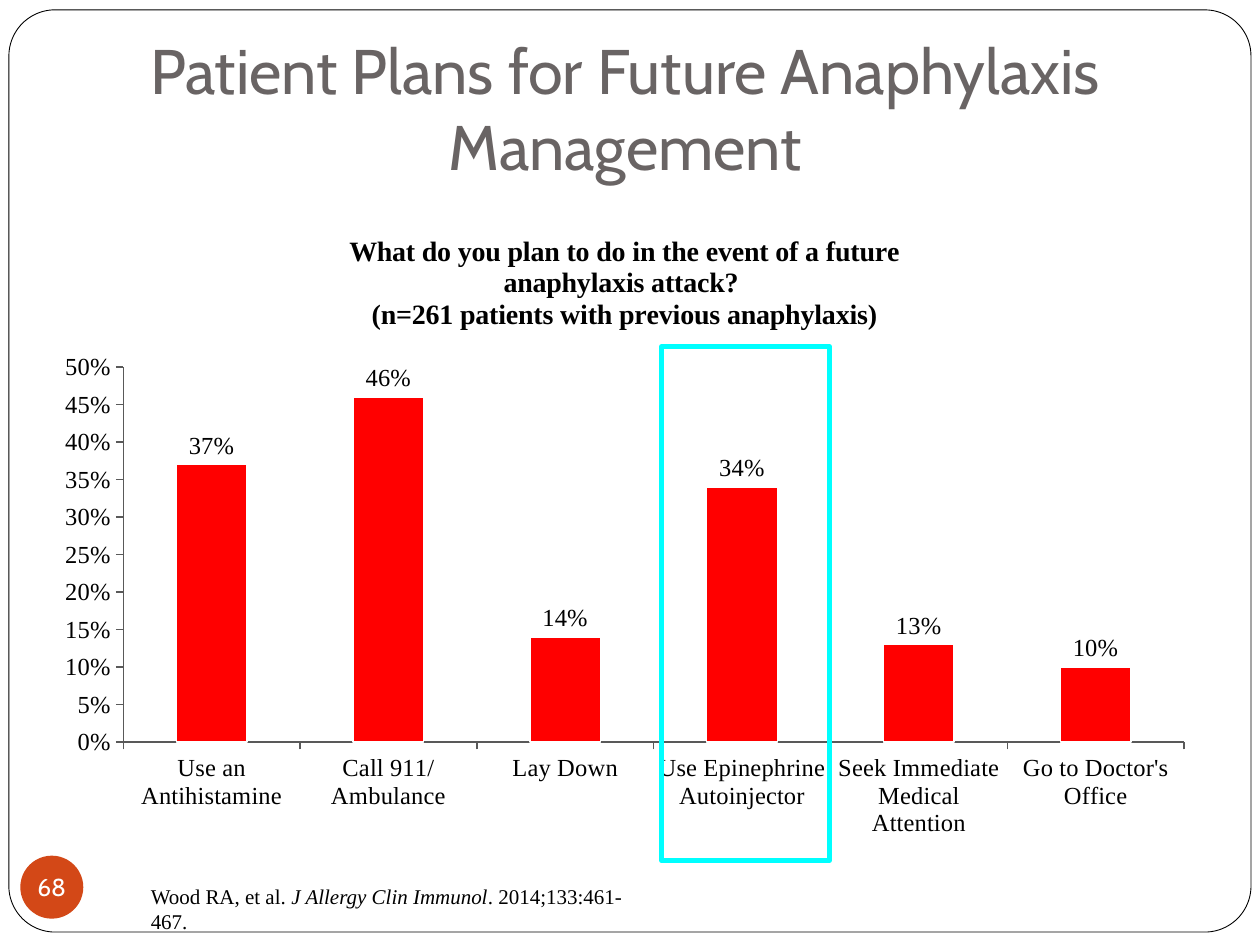
from typing import NamedTuple

from lxml import etree
from pptx import Presentation
from pptx.chart.data import CategoryChartData
from pptx.dml.color import RGBColor
from pptx.enum.chart import XL_CHART_TYPE, XL_LABEL_POSITION, XL_TICK_MARK
from pptx.enum.shapes import MSO_SHAPE
from pptx.enum.text import MSO_ANCHOR, MSO_AUTO_SIZE, PP_ALIGN
from pptx.oxml import parse_xml
from pptx.oxml.ns import nsdecls, qn
from pptx.util import Cm, Pt

COLORS = {
    "white": "FFFFFF",
    "black": "000000",
    "title": "696464",
    "badge": "D34817",
    "bar": "FF0000",
    "axis": "595959",
    "highlight": "00FFFF",
}
HEADING_FONT = "Cabin"
BODY_FONT = "Times New Roman"

PLANS = {
    "Use an Antihistamine": 0.37,
    "Call 911/Ambulance": 0.46,
    "Lay Down": 0.14,
    "Use Epinephrine Autoinjector": 0.34,
    "Seek Immediate Medical Attention": 0.13,
    "Go to Doctor's Office": 0.10,
}
QUESTION = [
    "What do you plan to do in the event of a future",
    "anaphylaxis attack? ",
    "(n=261 patients with previous anaphylaxis)",
]
CITATION = [
    ("Wood RA, et al. ", False),
    ("J Allergy Clin Immunol", True),
    (". 2014;133:461-467.", False),
]


class Box(NamedTuple):
    """A region in centimetres."""

    left: float
    top: float
    width: float
    height: float

    def lengths(self):
        """Return the four sides as slide lengths."""
        return [Cm(side) for side in self]

    def inner(self, left, top, width, height):
        """Return a box placed relative to this one."""
        return Box(self.left + left, self.top + top, width, height)


def rgb(name):
    """Look up a palette colour."""
    return RGBColor.from_string(COLORS[name])


def style_font(font, face, size, color="black", bold=False, italic=False):
    """Apply face, size, colour and emphasis to a font."""
    font.name, font.size = face, Pt(size)
    font.bold, font.italic = bold, italic
    font.color.rgb = rgb(color)


def set_insets(frame, side, top, bottom):
    """Set the text insets in centimetres."""
    frame.margin_left = frame.margin_right = Cm(side)
    frame.margin_top, frame.margin_bottom = Cm(top), Cm(bottom)


def add_outline(slide, preset, box, fill=None, line=None, width=1):
    """Add a flat preset shape with optional fill and line."""
    shape = slide.shapes.add_shape(preset, *box.lengths())
    shape.shadow.inherit = False
    if fill:
        shape.fill.solid()
        shape.fill.fore_color.rgb = rgb(fill)
    else:
        shape.fill.background()
    if line:
        shape.line.color.rgb = rgb(line)
        shape.line.width = Pt(width)
    else:
        shape.line.fill.background()
    return shape


def add_frame(slide, box):
    """Put the rounded page frame behind the title."""
    frame = add_outline(slide, MSO_SHAPE.ROUNDED_RECTANGLE, box, "white", "black", 0.5)
    frame.adjustments[0] = 0.05
    slide.shapes.title.element.addprevious(frame.element)


def add_title(slide, box):
    """Fill and place the title placeholder."""
    title = slide.shapes.title
    title.left, title.top, title.width, title.height = box.lengths()
    frame = title.text_frame
    frame.text = "Patient Plans for Future Anaphylaxis Management"
    frame.auto_size = MSO_AUTO_SIZE.NONE
    frame.word_wrap = True
    frame.vertical_anchor = MSO_ANCHOR.BOTTOM
    set_insets(frame, 0.25, 0.13, 0.25)
    heading = frame.paragraphs[0]
    heading.alignment = PP_ALIGN.CENTER
    style_font(heading.runs[0].font, HEADING_FONT, 36, "title")


def add_page_badge(slide, box):
    """Add the round page number."""
    badge = add_outline(slide, MSO_SHAPE.OVAL, box, "badge")
    frame = badge.text_frame
    frame.text = "68"
    frame.word_wrap = False
    frame.vertical_anchor = MSO_ANCHOR.MIDDLE
    set_insets(frame, 0, 0, 0)
    number = frame.paragraphs[0]
    number.alignment = PP_ALIGN.CENTER
    style_font(number.runs[0].font, HEADING_FONT, 14, "white")


def add_citation(slide, box):
    """Add the source line with the journal in italics."""
    frame = slide.shapes.add_textbox(*box.lengths()).text_frame
    frame.word_wrap = True
    frame.vertical_anchor = MSO_ANCHOR.MIDDLE
    set_insets(frame, 0.25, 0.25, 0.25)
    for wording, italic in CITATION:
        run = frame.paragraphs[0].add_run()
        run.text = wording
        style_font(run.font, BODY_FONT, 12, italic=italic)


def set_plot_layout(chart, **fractions):
    """Fix the inner plot area as fractions of the chart."""
    plot_area = chart.element.find(".//" + qn("c:plotArea"))
    for old in plot_area.findall(qn("c:layout")):
        plot_area.remove(old)
    layout = parse_xml(f"<c:layout {nsdecls('c')}><c:manualLayout/></c:layout>")
    settings = {"layoutTarget": "inner", "xMode": "edge", "yMode": "edge", **fractions}
    for tag, value in settings.items():
        etree.SubElement(layout[0], qn(f"c:{tag}")).set("val", str(value))
    plot_area.insert(0, layout)


def add_plan_chart(slide, box):
    """Add the column chart and highlight the autoinjector column."""
    data = CategoryChartData(number_format="0%")
    data.categories = list(PLANS)
    data.add_series("Series 1", list(PLANS.values()))
    chart = slide.shapes.add_chart(
        XL_CHART_TYPE.COLUMN_CLUSTERED, *box.lengths(), data
    ).chart
    style_font(chart.font, BODY_FONT, 14)
    chart.has_legend = False
    chart.has_title = True
    question = chart.chart_title.text_frame
    question.text = "\n".join(QUESTION)
    for paragraph in question.paragraphs:
        style_font(paragraph.runs[0].font, BODY_FONT, 16, bold=True)
    set_plot_layout(chart, x=0.07, y=0.245, w=0.91, h=0.586)

    for axis in (chart.category_axis, chart.value_axis):
        axis.has_major_gridlines = False
        axis.major_tick_mark = XL_TICK_MARK.OUTSIDE
        axis.format.line.color.rgb = rgb("axis")
        axis.format.line.width = Pt(0.75)
        style_font(axis.tick_labels.font, BODY_FONT, 14)
    scale = chart.value_axis
    scale.minimum_scale, scale.maximum_scale, scale.major_unit = 0, 0.5, 0.05
    scale.tick_labels.number_format = "0%"
    scale.tick_labels.number_format_is_linked = False

    plot = chart.plots[0]
    plot.gap_width = 150
    plot.vary_by_categories = False
    bars = plot.series[0].format
    bars.fill.solid()
    bars.fill.fore_color.rgb = rgb("bar")
    bars.line.color.rgb = rgb("white")
    bars.line.width = Pt(0.75)
    plot.has_data_labels = True
    labels = plot.data_labels
    labels.show_value = True
    labels.number_format, labels.number_format_is_linked = "0%", False
    labels.position = XL_LABEL_POSITION.OUTSIDE_END
    style_font(labels.font, BODY_FONT, 14)

    highlight = box.inner(12.5, 2.75, 3.38, 10.36)
    add_outline(slide, MSO_SHAPE.RECTANGLE, highlight, line="highlight", width=3)


def main():
    """Build and save the slide."""
    deck = Presentation()
    deck.slide_width, deck.slide_height = Cm(25.4), Cm(19.05)
    slide = deck.slides.add_slide(deck.slide_layouts[5])
    add_frame(slide, Box(0.18, 0.2, 25.04, 18.59))
    add_title(slide, Box(1.07, 0.76, 23.06, 3.18))
    add_page_badge(slide, Box(0.41, 17.25, 1.27, 1.27))
    add_citation(slide, Box(2.79, 17.81, 10.13, 1.02))
    add_plan_chart(slide, Box(0.84, 4.24, 23.5, 12.9))
    deck.save("out.pptx")


if __name__ == "__main__":
    main()
